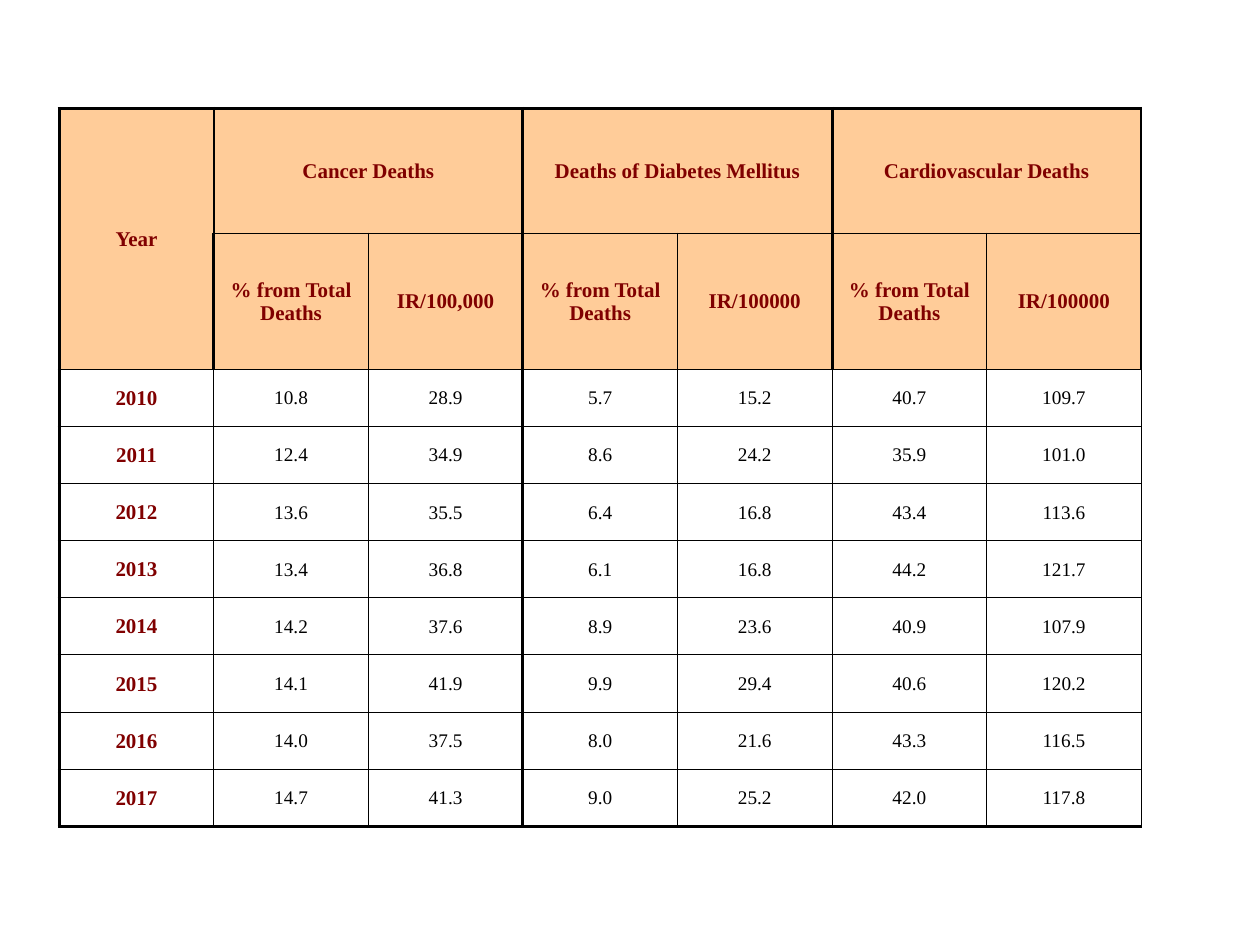
import pptx
import pptx.util
import pptx.dml.color
import pptx.enum.text
import pptx.oxml.ns
from lxml import etree

Inches = pptx.util.Inches
Pt = pptx.util.Pt
RGBColor = pptx.dml.color.RGBColor
qn = pptx.oxml.ns.qn

BLACK = RGBColor(0x00, 0x00, 0x00)
MAROON = RGBColor(0x80, 0x00, 0x00)
PEACH = RGBColor(0xFF, 0xCC, 0x99)

FONT = "Times New Roman"
THIN, MEDIUM, THICK = 0.5, 1, 2
HEADER_ROWS = 2
GROUP_EDGES = [THICK, MEDIUM, THIN, THICK, THIN, THICK, THIN, MEDIUM]
MEASURE_EDGES = [THICK, THICK, MEDIUM, THICK, MEDIUM, THICK, MEDIUM, MEDIUM]
BODY_EDGES = [THICK, THIN, THIN, THICK, THIN, THIN, THIN, THIN]

SHARE = "% from Total Deaths"
ROWS = [
    ["Year", "Cancer Deaths", "", "Deaths of Diabetes Mellitus", "", "Cardiovascular Deaths", ""],
    ["", SHARE, "IR/100,000", SHARE, "IR/100000", SHARE, "IR/100000"],
    ["2010", "10.8", "28.9", "5.7", "15.2", "40.7", "109.7"],
    ["2011", "12.4", "34.9", "8.6", "24.2", "35.9", "101.0"],
    ["2012", "13.6", "35.5", "6.4", "16.8", "43.4", "113.6"],
    ["2013", "13.4", "36.8", "6.1", "16.8", "44.2", "121.7"],
    ["2014", "14.2", "37.6", "8.9", "23.6", "40.9", "107.9"],
    ["2015", "14.1", "41.9", "9.9", "29.4", "40.6", "120.2"],
    ["2016", "14.0", "37.5", "8.0", "21.6", "43.3", "116.5"],
    ["2017", "14.7", "41.3", "9.0", "25.2", "42.0", "117.8"],
]


def set_borders(cell, widths):
    """Draw the left, right, top and bottom lines of a cell."""
    tcPr = cell._tc.get_or_add_tcPr()
    for side, width in zip("LRTB", widths):
        ln = etree.SubElement(tcPr, qn(f"a:ln{side}"), w=str(Pt(width)))
        fill = etree.SubElement(ln, qn("a:solidFill"))
        etree.SubElement(fill, qn("a:srgbClr"), val=str(BLACK))


def border_widths(cell, row, col):
    """Return the left, right, top and bottom line widths of a cell."""
    edges = [GROUP_EDGES, MEASURE_EDGES][row] if row < HEADER_ROWS else BODY_EDGES
    top = THICK if row == 0 else THIN
    bottom = THICK if row == len(ROWS) - 1 else THIN
    span = cell.span_width if cell.is_merge_origin else 1
    return edges[col], edges[col + span], top, bottom


def set_text(cell, text, is_label):
    """Write centred text in the label or the value style."""
    cell.vertical_anchor = pptx.enum.text.MSO_ANCHOR.MIDDLE
    cell.margin_left = cell.margin_right = cell.margin_top = Inches(0.01)
    cell.margin_bottom = 0
    p = cell.text_frame.paragraphs[0]
    p.text = text
    p.alignment = pptx.enum.text.PP_ALIGN.CENTER
    p.font.name = FONT
    p.font.size = Pt(12 if is_label else 11)
    p.font.bold = is_label
    p.font.color.rgb = MAROON if is_label else BLACK


def set_fill(cell, is_header):
    """Fill a header cell and leave a body cell clear."""
    if is_header:
        cell.fill.solid()
        cell.fill.fore_color.rgb = PEACH
    else:
        cell.fill.background()


def size_grid(table):
    """Set the column widths and row heights."""
    for column in table.columns:
        column.width = Inches(8.59 / len(table.columns))
    heights = [0.99, 1.08]
    body_height = (5.7 - sum(heights)) / (len(ROWS) - HEADER_ROWS)
    heights += [body_height] * (len(ROWS) - HEADER_ROWS)
    for row, height in zip(table.rows, heights):
        row.height = Inches(height)


def add_deaths_table(s):
    """Add the table of deaths by year and cause."""
    frame = s.shapes.add_table(len(ROWS), len(ROWS[0]), Inches(0.47), Inches(0.86),
                               Inches(8.59), Inches(5.7))
    table = frame.table
    table.first_row = table.horz_banding = False
    size_grid(table)
    table.cell(0, 0).merge(table.cell(1, 0))
    for col in (1, 3, 5):
        table.cell(0, col).merge(table.cell(0, col + 1))
    for row, texts in enumerate(ROWS):
        for col, text in enumerate(texts):
            cell = table.cell(row, col)
            if cell.is_spanned:
                continue
            is_header = row < HEADER_ROWS
            set_text(cell, text, is_header or col == 0)
            set_borders(cell, border_widths(cell, row, col))
            set_fill(cell, is_header)


def main():
    """Build the slide and save it."""
    prs = pptx.Presentation()
    prs.slide_width = Inches(10)
    prs.slide_height = Inches(7.5)
    s = prs.slides.add_slide(prs.slide_layouts[6])
    add_deaths_table(s)
    prs.save("out.pptx")


if __name__ == "__main__":
    main()
